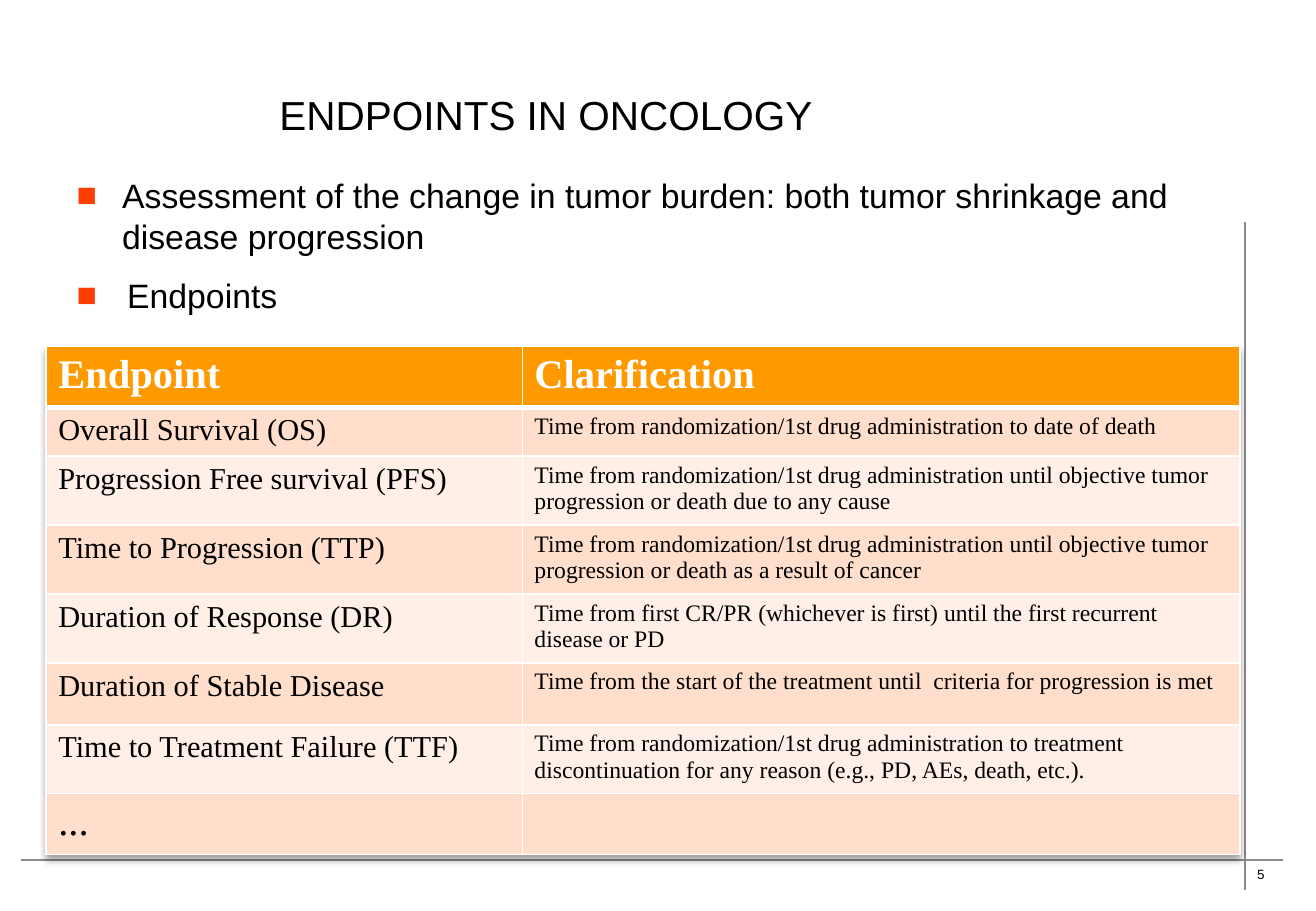
from dataclasses import dataclass

from lxml import etree
from pptx import Presentation
from pptx.dml.color import RGBColor
from pptx.enum.shapes import MSO_CONNECTOR
from pptx.enum.text import MSO_ANCHOR, MSO_AUTO_SIZE, PP_ALIGN
from pptx.oxml.ns import qn
from pptx.util import Pt

STRAIGHT = MSO_CONNECTOR.STRAIGHT
MIDDLE, TOP = MSO_ANCHOR.MIDDLE, MSO_ANCHOR.TOP
NO_AUTOFIT, GROW = MSO_AUTO_SIZE.NONE, MSO_AUTO_SIZE.SHAPE_TO_FIT_TEXT
LEFT = PP_ALIGN.LEFT

SANS, SERIF = "Arial", "Times New Roman"
COLORS = {
    "text": "000000",
    "white": "FFFFFF",
    "rule": "8B8B8B",
    "bullet": "FF3F00",
    "header": "FF9900",
    "dark_band": "FFDECC",
    "light_band": "FFEFE7",
}


@dataclass
class Rule:
    start: tuple[float, float]
    end: tuple[float, float]


@dataclass
class Bullet:
    text: str
    indent: float
    space_before: float


@dataclass
class Endpoint:
    name: str
    clarification: str
    height: float
    name_size: float = 18


RULES = [
    Rule((12.24, 509.76), (760.32, 509.76)),
    Rule((738, 527.76), (738, 131.76)),
]
BULLETS = [
    Bullet("Assessment of the change in tumor burden: both tumor shrinkage and disease progression", 27, 0),
    Bullet("Endpoints", 30, 11),
]
HEADINGS = ("Endpoint", "Clarification")
HEADER_HEIGHT = 26
COLUMN_WIDTHS = (282.25, 425.5)
ENDPOINTS = [
    Endpoint("Overall Survival (OS)",
             "Time from randomization/1st drug administration to date of death", 27.36),
    Endpoint("Progression Free survival (PFS)",
             "Time from randomization/1st drug administration until objective tumor "
             "progression or death due to any cause", 36.72),
    Endpoint("Time to Progression (TTP)",
             "Time from randomization/1st drug administration until objective tumor "
             "progression or death as a result of cancer", 36.72),
    Endpoint("Duration of Response (DR)",
             "Time from first CR/PR (whichever is first) until the first recurrent disease or PD", 36.72),
    Endpoint("Duration of Stable Disease",
             "Time from the start of the treatment until  criteria for progression is met", 36.72),
    Endpoint("Time to Treatment Failure (TTF)",
             "Time from randomization/1st drug administration to treatment "
             "discontinuation for any reason (e.g., PD, AEs, death, etc.).", 36.72),
    Endpoint("...", "", 26, 24),
]


def rgb(name: str) -> RGBColor:
    return RGBColor.from_string(COLORS[name])


def format_runs(paragraph, size: float, font_name: str, color: str = "text", bold: bool = False) -> None:
    for run in paragraph.runs:
        run.font.size = Pt(size)
        run.font.name = font_name
        run.font.bold = bold
        run.font.color.rgb = rgb(color)


def place(shape, left: float, top: float, width: float, height: float) -> None:
    shape.left, shape.top = Pt(left), Pt(top)
    shape.width, shape.height = Pt(width), Pt(height)


def add_color(parent, name: str):
    return etree.SubElement(parent, qn("a:srgbClr"), val=COLORS[name])


def fill_title(title) -> None:
    place(title, 158.4, 31.68, 633.6, 72)
    frame = title.text_frame
    frame.text = "ENDPOINTS IN ONCOLOGY"
    frame.auto_size = NO_AUTOFIT
    frame.vertical_anchor = MIDDLE
    frame.paragraphs[0].alignment = LEFT
    format_runs(frame.paragraphs[0], 24, SANS)


def fill_body(body) -> None:
    place(body, 38.16, 100.08, 691.92, 365.76)
    frame = body.text_frame
    frame.text = "\n".join(bullet.text for bullet in BULLETS)
    frame.auto_size = NO_AUTOFIT
    frame.vertical_anchor = TOP
    for paragraph, bullet in zip(frame.paragraphs, BULLETS):
        paragraph.space_before = Pt(bullet.space_before)
        properties = paragraph._p.get_or_add_pPr()
        properties.set("marL", str(Pt(bullet.indent)))
        properties.set("indent", str(-Pt(bullet.indent)))
        add_color(etree.SubElement(properties, qn("a:buClr")), "bullet")
        etree.SubElement(properties, qn("a:buFont"), typeface=SANS)
        etree.SubElement(properties, qn("a:buChar"), char="■")
        format_runs(paragraph, 20, SANS)


def add_rule(slide, rule: Rule) -> None:
    points = [Pt(value) for value in (*rule.start, *rule.end)]
    connector = slide.shapes.add_connector(STRAIGHT, *points)
    connector.line.color.rgb = rgb("rule")
    connector.line.width = Pt(1)
    etree.SubElement(connector._element.spPr, qn("a:effectLst"))


def add_page_number(slide) -> None:
    box = slide.shapes.add_textbox(Pt(738), Pt(509.76), Pt(24.48), Pt(16.56))
    frame = box.text_frame
    frame.text = "5"
    frame.word_wrap = False
    frame.auto_size = GROW
    format_runs(frame.paragraphs[0], 8, SANS)


def set_borders(cell, top: float, bottom: float) -> None:
    properties = cell._tc.get_or_add_tcPr()
    widths = {"a:lnL": 1, "a:lnR": 1, "a:lnT": top, "a:lnB": bottom}
    for index, (tag, width) in enumerate(widths.items()):
        line = etree.Element(qn(tag), w=str(Pt(width)))
        add_color(etree.SubElement(line, qn("a:solidFill")), "white")
        properties.insert(index, line)


def fill_cell(cell, text: str, size: float, row: int) -> None:
    is_header = row == 0
    band = "header" if is_header else "dark_band" if row % 2 else "light_band"
    cell.text_frame.text = text
    format_runs(cell.text_frame.paragraphs[0], size, SERIF, "white" if is_header else "text", is_header)
    cell.fill.solid()
    cell.fill.fore_color.rgb = rgb(band)
    set_borders(cell, 3 if row == 1 else 1, 3 if is_header else 1)


def add_table_shadow(table) -> None:
    effects = etree.Element(qn("a:effectLst"))
    shadow = etree.SubElement(effects, qn("a:outerShdw"), blurRad=str(Pt(4)),
                              dist=str(Pt(3)), dir="5400000", rotWithShape="0")
    etree.SubElement(add_color(shadow, "text"), qn("a:alpha"), val="40000")
    table._tbl.tblPr.insert(0, effects)


def add_endpoint_table(slide) -> None:
    heights = [HEADER_HEIGHT] + [endpoint.height for endpoint in ENDPOINTS]
    table = slide.shapes.add_table(
        len(heights), len(COLUMN_WIDTHS), Pt(27.36), Pt(205.5),
        Pt(sum(COLUMN_WIDTHS)), Pt(sum(heights))).table
    table.horz_banding = False
    add_table_shadow(table)
    for column, width in zip(table.columns, COLUMN_WIDTHS):
        column.width = Pt(width)
    for row, height in zip(table.rows, heights):
        row.height = Pt(height)
    for column, heading in enumerate(HEADINGS):
        fill_cell(table.cell(0, column), heading, 24, 0)
    for row, endpoint in enumerate(ENDPOINTS, start=1):
        fill_cell(table.cell(row, 0), endpoint.name, endpoint.name_size, row)
        fill_cell(table.cell(row, 1), endpoint.clarification, 14, row)


def main() -> None:
    presentation = Presentation()
    presentation.slide_width, presentation.slide_height = Pt(780), Pt(540)
    slide = presentation.slides.add_slide(presentation.slide_layouts[1])
    fill_title(slide.shapes.title)
    fill_body(slide.placeholders[1])
    for rule in RULES:
        add_rule(slide, rule)
    add_page_number(slide)
    add_endpoint_table(slide)
    presentation.save("out.pptx")


if __name__ == "__main__":
    main()
